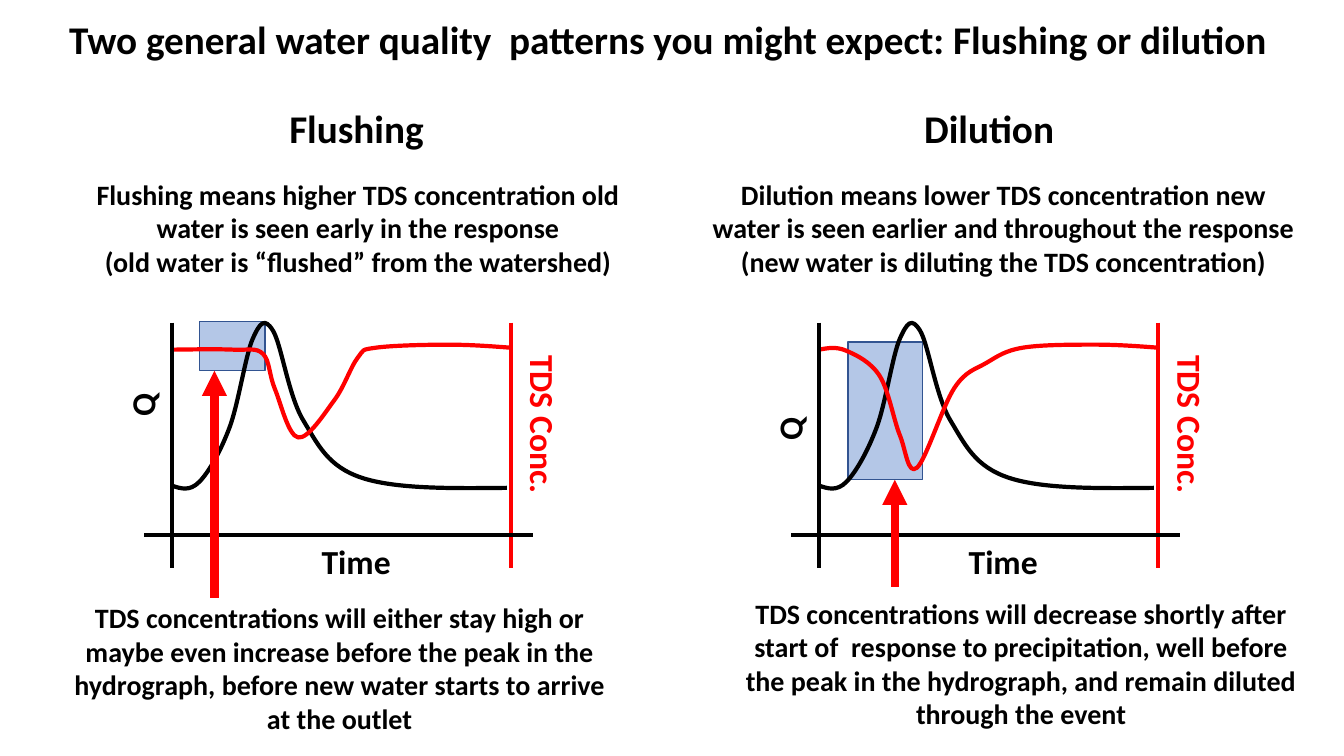
"""Build a slide comparing flushing and dilution patterns in water quality."""
from dataclasses import dataclass
from lxml.etree import SubElement
from pptx import Presentation
from pptx.dml.color import RGBColor
from pptx.enum.shapes import MSO_CONNECTOR, MSO_SHAPE
from pptx.enum.text import MSO_ANCHOR, MSO_AUTO_SIZE, PP_ALIGN
from pptx.oxml.ns import qn
from pptx.util import Pt

BLACK, RED, BLUE, NAVY = "000000", "FF0000", "B4C7E7", "325491"
TITLE_SIZE, LABEL_SIZE, BODY_SIZE = 28, 24, 20
SLIDE_WIDTH, SLIDE_HEIGHT = 960, 540
TIME_AXIS, AXIS_TOP, AXIS_BOTTOM = 382.3, 230.5, 405.5
PLOT_WIDTH, OVERHANG = 242, 18
CURVE_WIDTH, ARROW_WIDTH = 3, 6

BASE_FLOW, STEADY_TDS = (0, 35.3), (0, 132.5)
RECOVERED_TDS = [(145.4, 133.9), (196.6, 136.1), (241.9, 133.9)]
DISCHARGE = [BASE_FLOW, (19.4, 38.1), (41, 77), (57.6, 140.4),
             (72, 146.1), (93.6, 82.1), (135.4, 41), (239, 33.8)]
FLUSHING_TDS = [STEADY_TDS, (43.9, 132.5), (64.8, 129.6), (73.4, 104.4),
                (90, 69.8), (115.9, 96.5), (132.5, 126.7), *RECOVERED_TDS]
DILUTION_TDS = [STEADY_TDS, (19.4, 131.7), (43.2, 113.7), (57.6, 71.3),
                (69.8, 48.2), (96.5, 105.1), (119.5, 123.1), *RECOVERED_TDS]


@dataclass
class Pattern:
    name: str
    heading_box: tuple
    meaning: str
    meaning_box: tuple
    outcome: str
    outcome_box: tuple
    axis: float
    discharge_label_top: float
    concentration: list
    highlight_box: tuple
    arrow_start: tuple


PATTERNS = [
    Pattern(
        name="Flushing",
        heading_box=(80.6, 70.8, 348, 41),
        meaning="Flushing means higher TDS concentration old water is seen early in the "
                "response\n(old water is “flushed” from the watershed)",
        meaning_box=(52, 123, 407.5, 80),
        outcome="TDS concentrations will either stay high or maybe even increase before the "
                "peak in the hydrograph, before new water starts to arrive at the outlet",
        outcome_box=(38.9, 425.3, 407.5, 104.4),
        axis=123, discharge_label_top=271.4, concentration=FLUSHING_TDS,
        highlight_box=(142.6, 229.6, 46.8, 35.2), arrow_start=(153.2, 427)),
    Pattern(
        name="Dilution",
        heading_box=(532.5, 71.2, 348, 41),
        meaning="Dilution means lower TDS concentration new water is seen earlier and "
                "throughout the response\n(new water is diluting the TDS concentration)",
        meaning_box=(500.4, 123, 432.7, 80),
        outcome="TDS concentrations will decrease shortly after start of  response to "
                "precipitation, well before the peak in the hydrograph, and remain diluted "
                "through the event",
        outcome_box=(525.6, 422.2, 407.5, 104.4),
        axis=585.2, discharge_label_top=288.2, concentration=DILUTION_TDS,
        highlight_box=(605.7, 244.2, 53.3, 98.5), arrow_start=(639.2, 419)),
]


def color(hex_string):
    return RGBColor.from_string(hex_string)


def between(start, end, share):
    return tuple(a + (b - a) * share for a, b in zip(start, end))


def smooth_segments(anchors):
    last = len(anchors) - 1
    slopes = [None] + [
        tuple((after - before) / 6 for before, after in zip(previous, following))
        for previous, following in zip(anchors, anchors[2:])]
    for index in range(last):
        start, end = anchors[index], anchors[index + 1]
        leaving = arriving = None
        if index > 0:
            leaving = tuple(p + s for p, s in zip(start, slopes[index]))
        if index + 1 < last:
            arriving = tuple(p - s for p, s in zip(end, slopes[index + 1]))
        yield (leaving or between(start, arriving, 0.5),
               arriving or between(leaving, end, 0.5), end)


class HydrographSlide:
    def __init__(self, presentation, font="Calibri"):
        self.slide = presentation.slides.add_slide(presentation.slide_layouts[6])
        self.font = font

    def text(self, box, content, size, ink=BLACK, wrap=True, rotation=0, shapes=None):
        shape = (shapes or self.slide.shapes).add_textbox(*map(Pt, box))
        shape.rotation = rotation
        frame = shape.text_frame
        frame.word_wrap = wrap
        frame.auto_size = MSO_AUTO_SIZE.SHAPE_TO_FIT_TEXT
        frame.vertical_anchor = MSO_ANCHOR.TOP
        paragraph = frame.paragraphs[0]
        paragraph.alignment = PP_ALIGN.CENTER
        for index, line in enumerate(content.split("\n")):
            if index:
                paragraph.add_line_break()
            run = paragraph.add_run()
            run.text = line
            run.font.name = self.font
            run.font.size = Pt(size)
            run.font.bold = True
            run.font.color.rgb = color(ink)

    def highlight(self, box):
        shape = self.slide.shapes.add_shape(MSO_SHAPE.RECTANGLE, *map(Pt, box))
        shape.shadow.inherit = False
        shape.fill.solid()
        shape.fill.fore_color.rgb = color(BLUE)
        shape.line.color.rgb = color(NAVY)
        shape.line.width = Pt(1)

    def line(self, start, end, ink=BLACK, width=CURVE_WIDTH, arrow=False, shapes=None):
        connector = (shapes or self.slide.shapes).add_connector(
            MSO_CONNECTOR.STRAIGHT, *map(Pt, (*start, *end)))
        connector.line.color.rgb = color(ink)
        connector.line.width = Pt(width)
        properties = connector._element.spPr
        if arrow:
            SubElement(properties.find(qn("a:ln")), qn("a:tailEnd"), type="triangle")
        SubElement(properties, qn("a:effectLst"))

    def curve(self, axis, levels, ink, shapes):
        anchors = [(axis + time, TIME_AXIS - level) for time, level in levels]
        points = [point for segment in smooth_segments(anchors) for point in segment]
        builder = shapes.build_freeform(*map(Pt, anchors[0]))
        builder.add_line_segments([tuple(map(Pt, point)) for point in points], close=False)
        shape = builder.convert_to_shape()
        shape.shadow.inherit = False
        shape.fill.background()
        shape.line.color.rgb = color(ink)
        shape.line.width = Pt(CURVE_WIDTH)
        steps = list(shape._element.iter(qn("a:lnTo")))
        outline = steps[0].getparent()
        for first in range(0, len(steps), 3):
            bezier = SubElement(outline, qn("a:cubicBezTo"))
            for step in steps[first:first + 3]:
                bezier.append(step[0])
                outline.remove(step)

    def hydrograph(self, axis, discharge_label_top, concentration):
        shapes = self.slide.shapes.add_group_shape().shapes
        right = axis + PLOT_WIDTH
        for x, ink in ((axis, BLACK), (right, RED)):
            self.line((x, AXIS_TOP), (x, AXIS_BOTTOM), ink, shapes=shapes)
        self.line((axis - OVERHANG - 2, TIME_AXIS), (right + OVERHANG - 2, TIME_AXIS),
                  shapes=shapes)
        for label, box, ink, rotation in (
                ("Time", (axis + 99.4, TIME_AXIS + 0.7, 64, 36), BLACK, 0),
                ("Q", (axis - 37, discharge_label_top, 31, 36), BLACK, 270),
                ("TDS Conc.", (right - 34, 285, 114.5, 36), RED, 90)):
            self.text(box, label, LABEL_SIZE, ink, False, rotation, shapes)
        for levels, ink in ((DISCHARGE, BLACK), (concentration, RED)):
            self.curve(axis, levels, ink, shapes)

    def pattern(self, pattern):
        self.highlight(pattern.highlight_box)
        self.hydrograph(pattern.axis, pattern.discharge_label_top, pattern.concentration)
        self.text(pattern.heading_box, pattern.name, TITLE_SIZE)
        self.text(pattern.meaning_box, pattern.meaning, BODY_SIZE)
        self.text(pattern.outcome_box, pattern.outcome, BODY_SIZE)
        _, top, _, height = pattern.highlight_box
        tip = (pattern.arrow_start[0], top + height)
        self.line(pattern.arrow_start, tip, RED, ARROW_WIDTH, arrow=True)


def main():
    presentation = Presentation()
    presentation.slide_width, presentation.slide_height = Pt(SLIDE_WIDTH), Pt(SLIDE_HEIGHT)
    page = HydrographSlide(presentation)
    page.text((0, 7.2, SLIDE_WIDTH, 41), "Two general water quality  patterns you might "
              "expect: Flushing or dilution ", TITLE_SIZE)
    for pattern in PATTERNS:
        page.pattern(pattern)
    presentation.save("out.pptx")


if __name__ == "__main__":
    main()
